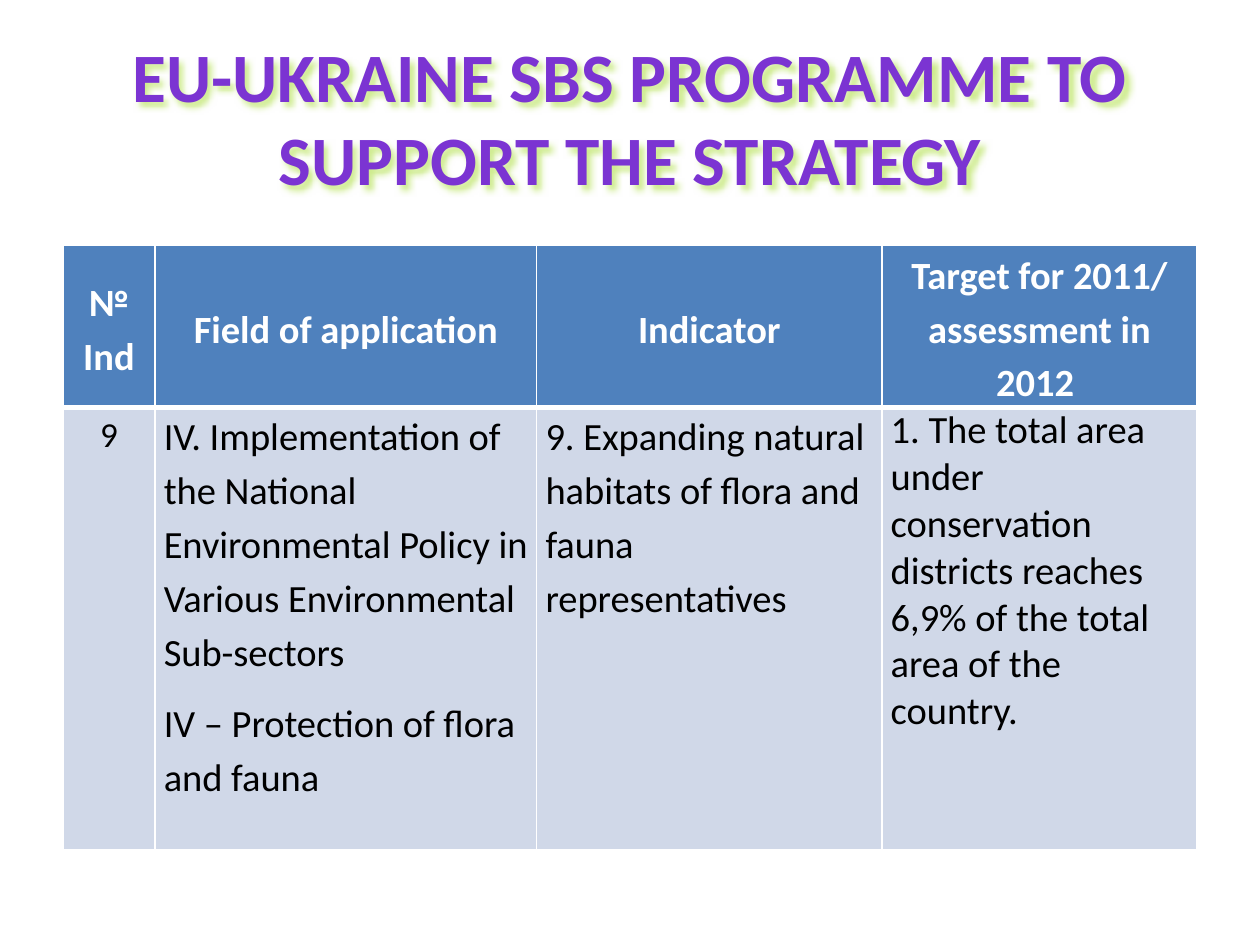
from dataclasses import dataclass

import pptx
import pptx.dml.color
import pptx.enum.text
import pptx.oxml
import pptx.oxml.ns
import pptx.util
from pptx.util import Inches, Pt

ALIGN = pptx.enum.text.PP_ALIGN
ANCHOR = pptx.enum.text.MSO_ANCHOR


@dataclass(frozen=True)
class Theme:
    font: str = "Calibri"
    title_color: str = "7B34D2"
    title_shadow: str = "CDEB8B"
    header_fill: str = "4F81BD"
    header_text: str = "FFFFFF"
    body_fill: str = "D0D8E8"
    body_text: str = "000000"
    border: str = "FFFFFF"
    title_size: float = 39.6
    table_size: float = 22
    number_size: float = 20
    thin_border: float = 1
    thick_border: float = 3


@dataclass(frozen=True)
class Cell:
    paragraphs: tuple[str, ...]
    header: bool = False
    centered: bool = False
    size: float = Theme.table_size
    spaced: bool = True


THEME = Theme()
TITLE = "EU-UKRAINE SBS PROGRAMME TO SUPPORT THE STRATEGY"
COLUMN_WIDTHS = (0.73, 3.03, 2.74, 2.5)
ROW_HEIGHTS = (1.26, 3.51)
HEADINGS = ("№ Ind", "Field of application", "Indicator", "Target for 2011/ assessment in 2012 ")
ROWS = (
    tuple(Cell((heading,), header=True, centered=True) for heading in HEADINGS),
    (
        Cell(("9",), centered=True, size=THEME.number_size),
        Cell((
            "IV. Implementation of the National Environmental Policy in Various "
            "Environmental Sub-sectors",
            "ІV – Protection of flora and fauna",
        )),
        Cell(("9. Expanding natural habitats of flora and fauna representatives",)),
        Cell((
            "1. The total area under conservation districts reaches 6,9% of the total "
            "area of the country.",
        ), spaced=False),
    ),
)


def rgb(value: str) -> pptx.dml.color.RGBColor:
    return pptx.dml.color.RGBColor.from_string(value)


def format_runs(paragraph, size: float, color: str, bold: bool) -> None:
    for run in paragraph.runs:
        run.font.name = THEME.font
        run.font.size = Pt(size)
        run.font.bold = bold
        run.font.color.rgb = rgb(color)


def add_soft_shadow(shape, color: str) -> None:
    """Give an unfilled shape's text a blurred shadow."""
    shape.fill.background()
    shape._element.spPr.append(pptx.oxml.parse_xml(
        f'<a:effectLst {pptx.oxml.ns.nsdecls("a")}>'
        f'<a:outerShdw blurRad="{Pt(4)}" dist="{Pt(3)}" dir="2700000" algn="tl" rotWithShape="0">'
        f'<a:srgbClr val="{color}"/></a:outerShdw></a:effectLst>'
    ))


def write_title(slide) -> None:
    title = slide.shapes.title
    title.left, title.top = Inches(0.5), Inches(0.3)
    title.width, title.height = Inches(9), Inches(1.25)
    title.text_frame.text = TITLE
    title.text_frame.word_wrap = True
    title.text_frame.vertical_anchor = ANCHOR.MIDDLE
    paragraph = title.text_frame.paragraphs[0]
    paragraph.alignment = ALIGN.CENTER
    format_runs(paragraph, THEME.title_size, THEME.title_color, True)
    add_soft_shadow(title, THEME.title_shadow)


def set_borders(table_cell, header: bool) -> None:
    """Draw thin borders, with a thick one between header and body."""
    thick_side = "lnB" if header else "lnT"
    properties = table_cell._tc.get_or_add_tcPr()
    for side in ("lnL", "lnR", "lnT", "lnB"):
        width = THEME.thick_border if side == thick_side else THEME.thin_border
        properties.append(pptx.oxml.parse_xml(
            f'<a:{side} {pptx.oxml.ns.nsdecls("a")} w="{Pt(width)}"><a:solidFill>'
            f'<a:srgbClr val="{THEME.border}"/></a:solidFill></a:{side}>'
        ))


def write_cell(table_cell, cell: Cell) -> None:
    set_borders(table_cell, cell.header)
    table_cell.fill.solid()
    table_cell.fill.fore_color.rgb = rgb(THEME.header_fill if cell.header else THEME.body_fill)
    table_cell.margin_left = table_cell.margin_right = Inches(0.07)
    table_cell.margin_top = table_cell.margin_bottom = 0
    table_cell.vertical_anchor = ANCHOR.MIDDLE if cell.header else ANCHOR.TOP
    table_cell.text_frame.text = "\n".join(cell.paragraphs)
    color = THEME.header_text if cell.header else THEME.body_text
    for paragraph in table_cell.text_frame.paragraphs:
        paragraph.alignment = ALIGN.CENTER if cell.centered else ALIGN.LEFT
        if cell.spaced:
            paragraph.line_spacing = 1.15
            paragraph.space_after = Pt(10)
        format_runs(paragraph, cell.size, color, cell.header)


def add_indicator_table(slide) -> None:
    table = slide.shapes.add_table(
        len(ROWS), len(COLUMN_WIDTHS), Inches(0.5), Inches(1.95),
        Inches(sum(COLUMN_WIDTHS)), Inches(sum(ROW_HEIGHTS)),
    ).table
    for column, width in zip(table.columns, COLUMN_WIDTHS):
        column.width = Inches(width)
    for row, height, cells in zip(table.rows, ROW_HEIGHTS, ROWS):
        row.height = Inches(height)
        for table_cell, cell in zip(row.cells, cells):
            write_cell(table_cell, cell)


def main() -> None:
    presentation = pptx.Presentation()
    presentation.slide_width, presentation.slide_height = Inches(10), Inches(7.5)
    slide = presentation.slides.add_slide(presentation.slide_layouts.get_by_name("Title Only"))
    write_title(slide)
    add_indicator_table(slide)
    presentation.save("out.pptx")


if __name__ == "__main__":
    main()
